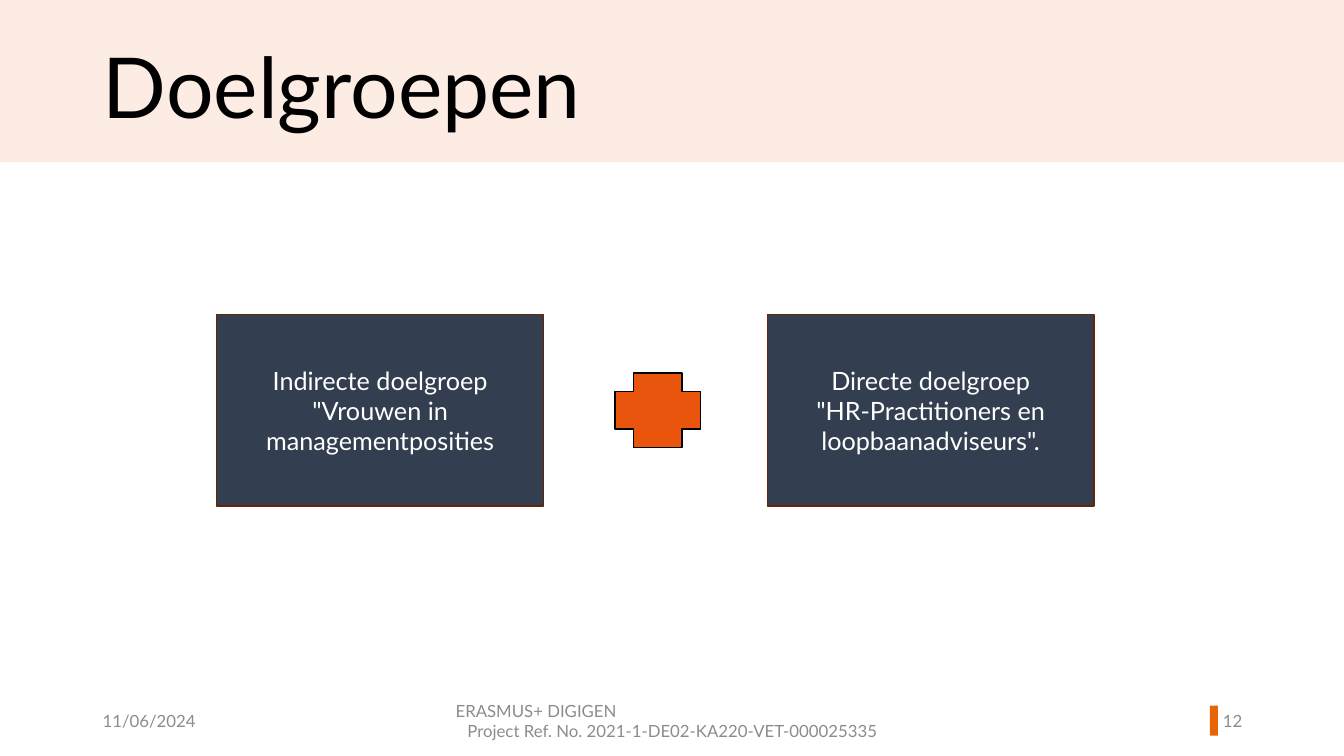
from dataclasses import dataclass
from pptx import Presentation
from pptx.dml.color import RGBColor
from pptx.enum.shapes import MSO_SHAPE
from pptx.enum.text import MSO_ANCHOR, PP_ALIGN
from pptx.util import Inches, Pt

RECT, PLUS = MSO_SHAPE.RECTANGLE, MSO_SHAPE.CROSS
TOP, MIDDLE = MSO_ANCHOR.TOP, MSO_ANCHOR.MIDDLE
LEFT, CENTER, RIGHT = PP_ALIGN.LEFT, PP_ALIGN.CENTER, PP_ALIGN.RIGHT

TITLE = "Doelgroepen"
GROUPS = [
    ["Indirecte doelgroep", '"Vrouwen in managementposities'],
    ["Directe doelgroep", '"HR-Practitioners en loopbaanadviseurs".'],
]
FOOTERS = [
    (6.9, 22.5, [("11/06/2024", LEFT)]),
    (33.16, 33.76, [
        ("ERASMUS+ DIGIGEN", LEFT),
        ("Project Ref. No. 2021-1-DE02-KA220-VET-000025335", CENTER),
    ]),
    (88.3, 4.88, [("12", RIGHT)]),
]


@dataclass
class Theme:
    font: str = "Lato"
    head: int = 60
    body: int = 18
    small: int = 12
    black: str = "000000"
    white: str = "FFFFFF"
    grey: str = "8C8C8C"
    band: str = "FDECE3"
    mark: str = "E86507"
    navy: str = "333F50"
    edge: str = "662506"
    plus: str = "E9550D"


theme = Theme()
WIDE, HIGH = Inches(13.33), Inches(7.5)
BOX_X, BOX_Y, BOX_W, BOX_H = 16.13, 41.6, 24.31, 25.33
PITCH = 40.96
PLUS_X, PLUS_W, PLUS_H = 45.76, 6.38, 9.87
FOOT_Y, FOOT_H = 92.67, 5.33


def place(x, y, w, h):
    return [round(v * size / 100) for v, size in
            ((x, WIDE), (y, HIGH), (w, WIDE), (h, HIGH))]


def draw(slide, kind, area, fill, edge=None):
    shape = slide.shapes.add_shape(kind, *place(*area))
    shape.shadow.inherit = False
    shape.fill.solid()
    shape.fill.fore_color.rgb = RGBColor.from_string(fill)
    if edge:
        shape.line.color.rgb = RGBColor.from_string(edge)
        shape.line.width = Pt(1)
    else:
        shape.line.fill.background()
    return shape


def write(shape, rows, size, tint, anchor=MIDDLE):
    frame = shape.text_frame
    frame.word_wrap = True
    frame.vertical_anchor = anchor
    frame.text = "\n".join(text for text, _ in rows)
    for para, (_, align) in zip(frame.paragraphs, rows):
        para.alignment = align
        for run in para.runs:
            run.font.name = theme.font
            run.font.size = Pt(size)
            run.font.color.rgb = RGBColor.from_string(tint)


def main():
    deck = Presentation()
    deck.slide_width, deck.slide_height = WIDE, HIGH
    slide = deck.slides.add_slide(deck.slide_layouts[5])

    band = draw(slide, RECT, (0, 0, 100, 21.47), theme.band)
    title = slide.shapes.title
    band._element.addnext(title._element)
    title.left, title.top, title.width, title.height = place(6.9, 5.47, 74.5, 11.33)
    write(title, [(TITLE, LEFT)], theme.head, theme.black, TOP)
    title.text_frame.paragraphs[0].line_spacing = 0.9

    draw(slide, RECT, (90.02, 93.33, 0.6, 4), theme.mark)
    for x, width, rows in FOOTERS:
        box = slide.shapes.add_textbox(*place(x, FOOT_Y, width, FOOT_H))
        write(box, rows, theme.small, theme.grey)

    for i, lines in enumerate(GROUPS):
        area = (BOX_X + i * PITCH, BOX_Y, BOX_W, BOX_H)
        box = draw(slide, RECT, area, theme.navy, theme.edge)
        write(box, [(line, CENTER) for line in lines], theme.body, theme.white)

    plus_y = BOX_Y + (BOX_H - PLUS_H) / 2
    draw(slide, PLUS, (PLUS_X, plus_y, PLUS_W, PLUS_H), theme.plus, theme.black)
    deck.save("out.pptx")


if __name__ == "__main__":
    main()
